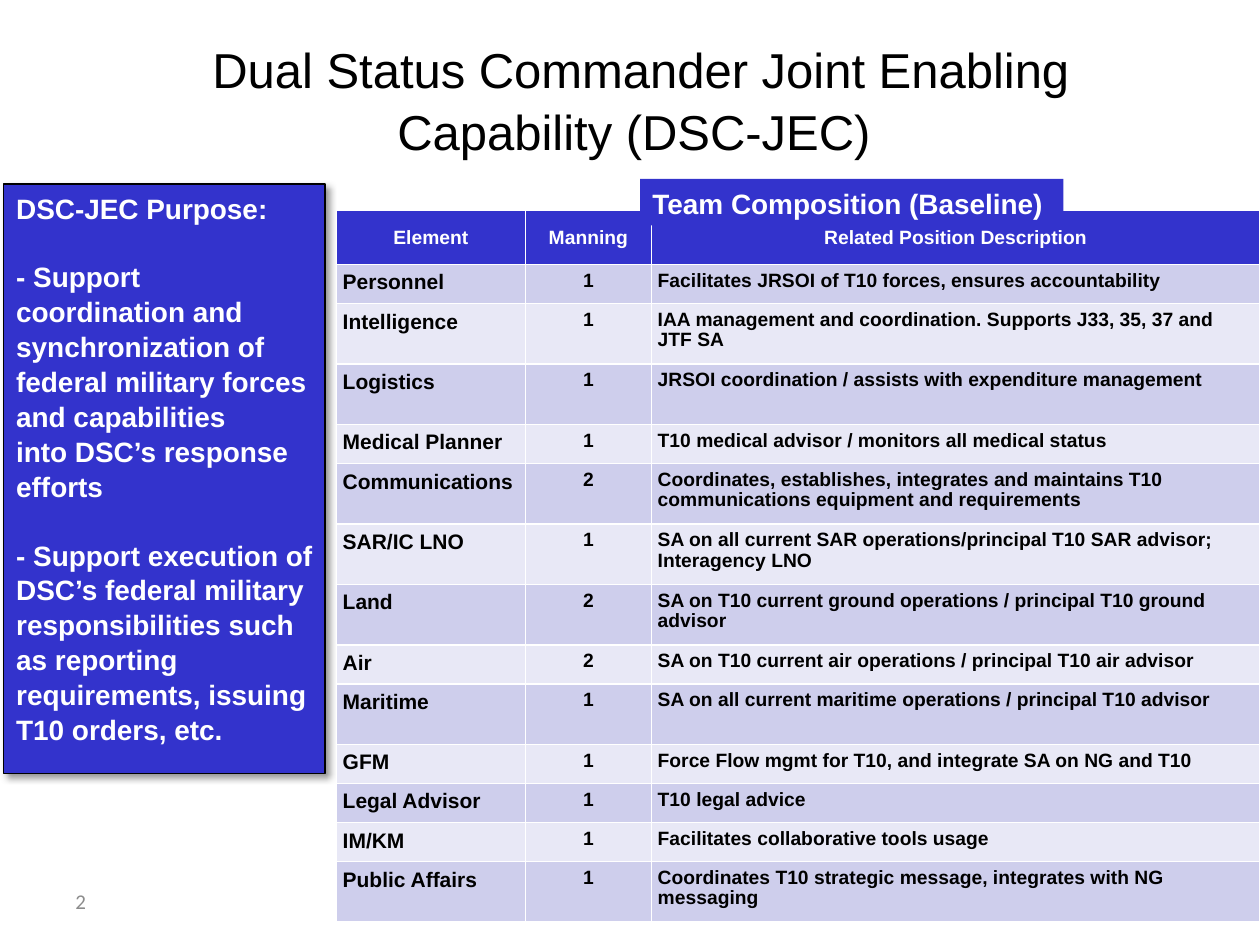
"""Build the DSC-JEC slide: purpose panel, team composition table and title."""
from lxml import etree
from pptx import Presentation
from pptx.dml.color import RGBColor
from pptx.enum.shapes import MSO_SHAPE as Shape
from pptx.enum.text import MSO_ANCHOR as Anchor, PP_ALIGN as Align
from pptx.util import Inches, Pt

COLORS = {
    "blue": "3333CC", "band_dark": "CECEEC", "band_light": "E8E8F6",
    "white": "FFFFFF", "black": "000000", "grey": "8C8C8C",
}
TITLE = "Dual Status Commander Joint Enabling Capability (DSC-JEC) "
LABEL = "Team Composition (Baseline)"
PAGE_NUMBER = "2"
PURPOSE = [
    ("DSC-JEC Purpose:", 0),
    ("- Support coordination and synchronization of federal military forces and capabilities", 19.2),
    ("into DSC’s response efforts", 0),
    ("- Support execution of DSC’s federal military responsibilities such as reporting "
     "requirements, issuing T10 orders, etc.", 19.2),
]
HEADINGS = ("Element", "Manning", "Related Position Description")
HEADING_HEIGHT, SHORT, TALL = 0.43, 0.31, 0.48
TEAM = [
    ("Personnel", 1, "Facilitates JRSOI of T10 forces, ensures accountability", SHORT),
    ("Intelligence", 1, "IAA management and coordination. Supports J33, 35, 37 and JTF SA", TALL),
    ("Logistics", 1, "JRSOI coordination / assists with expenditure management", TALL),
    ("Medical Planner", 1, "T10 medical advisor / monitors all medical status", SHORT),
    ("Communications", 2, "Coordinates, establishes, integrates and maintains T10 "
     "communications equipment and requirements", TALL),
    ("SAR/IC LNO", 1, "SA on all current SAR operations/principal T10 SAR advisor; "
     "Interagency LNO", TALL),
    ("Land", 2, "SA on T10 current ground operations / principal T10 ground advisor", TALL),
    ("Air", 2, "SA on T10 current air operations / principal T10 air advisor", SHORT),
    ("Maritime", 1, "SA on all current maritime operations / principal T10 advisor", TALL),
    ("GFM", 1, "Force Flow mgmt for T10, and integrate SA on NG and T10", SHORT),
    ("Legal Advisor", 1, "T10 legal advice", SHORT),
    ("IM/KM", 1, "Facilitates collaborative tools usage", SHORT),
    ("Public Affairs", 1, "Coordinates T10 strategic message, integrates with NG messaging", TALL),
]
COLUMNS = [(1.5, 12, Align.LEFT, 1), (1, 11, Align.CENTER, 0.95), (4.83, 11, Align.LEFT, 0.95)]
SHADOW = (
    '<a:effectLst xmlns:a="http://schemas.openxmlformats.org/drawingml/2006/main">'
    '<a:outerShdw blurRad="50800" dist="38100" dir="2700000" algn="tl" rotWithShape="0">'
    '<a:srgbClr val="000000"><a:alpha val="40000"/></a:srgbClr></a:outerShdw></a:effectLst>'
)


def rgb(name):
    return RGBColor.from_string(COLORS[name])


def write(paragraph, text, size, color, bold=False, align=Align.LEFT, font="Arial", spacing=None):
    paragraph.text = text
    paragraph.alignment = align
    paragraph.line_spacing = spacing
    paragraph.font.name = font
    paragraph.font.size = Pt(size)
    paragraph.font.bold = bold
    paragraph.font.color.rgb = rgb(color)


def add_text(slide, area, text, size, color, **style):
    box = slide.shapes.add_textbox(*map(Inches, area))
    box.text_frame.word_wrap = True
    write(box.text_frame.paragraphs[0], text, size, color, **style)
    return box


def add_panel(slide, area, entries):
    panel = slide.shapes.add_shape(Shape.RECTANGLE, *map(Inches, area))
    panel.shadow.inherit = False
    panel.fill.solid()
    panel.fill.fore_color.rgb = rgb("blue")
    panel.line.fill.background()
    frame = panel.text_frame
    frame.word_wrap = True
    frame.vertical_anchor = Anchor.TOP
    for index, (text, gap) in enumerate(entries):
        paragraph = frame.add_paragraph() if index else frame.paragraphs[0]
        write(paragraph, text, 16, "white", bold=True, spacing=1.04)
        paragraph.space_before = Pt(gap)
    return panel


def fill_cell(cell, text, fill, size, color, align, spacing):
    cell.margin_left = cell.margin_right = cell.margin_top = cell.margin_bottom = Inches(0.05)
    cell.fill.solid()
    cell.fill.fore_color.rgb = rgb(fill)
    write(cell.text_frame.paragraphs[0], str(text), size, color, True, align, spacing=spacing)


def add_team(slide, left, top):
    heights = [HEADING_HEIGHT] + [member[-1] for member in TEAM]
    width = sum(column[0] for column in COLUMNS)
    team = slide.shapes.add_table(len(heights), len(COLUMNS), Inches(left), Inches(top),
                                  Inches(width), Inches(sum(heights))).table
    for row, height in zip(team.rows, heights):
        row.height = Inches(height)
    for col, (column_width, size, align, spacing) in enumerate(COLUMNS):
        team.columns[col].width = Inches(column_width)
        heading = team.cell(0, col)
        heading.vertical_anchor = Anchor.MIDDLE
        fill_cell(heading, HEADINGS[col], "blue", 11, "white", Align.CENTER, 1)
        for row, member in enumerate(TEAM, 1):
            band = "band_dark" if row % 2 else "band_light"
            fill_cell(team.cell(row, col), member[col], band, size, "black", align, spacing)


def main():
    deck = Presentation()
    deck.slide_width, deck.slide_height = Inches(10), Inches(7.5)
    slide = deck.slides.add_slide(deck.slide_layouts[6])

    number = add_text(slide, (0.5, 6.95, 2.33, 0.4), PAGE_NUMBER, 12, "grey", font="Calibri")
    number.text_frame.vertical_anchor = Anchor.MIDDLE

    purpose = add_panel(slide, (0.03, 1.46, 2.55, 4.68), PURPOSE)
    purpose.line.color.rgb = rgb("black")
    purpose.line.width = Pt(0.75)
    properties = purpose.fill._xPr
    flat = properties.find("{*}effectLst")
    properties.replace(flat, etree.fromstring(SHADOW))

    add_team(slide, 2.67, 1.67)
    add_panel(slide, (5.08, 1.42, 3.36, 0.37), [(LABEL, 0)])
    add_text(slide, (0.92, 0.25, 8.33, 1), TITLE, 28, "black", align=Align.CENTER, spacing=1.04)
    deck.save("out.pptx")


if __name__ == "__main__":
    main()
